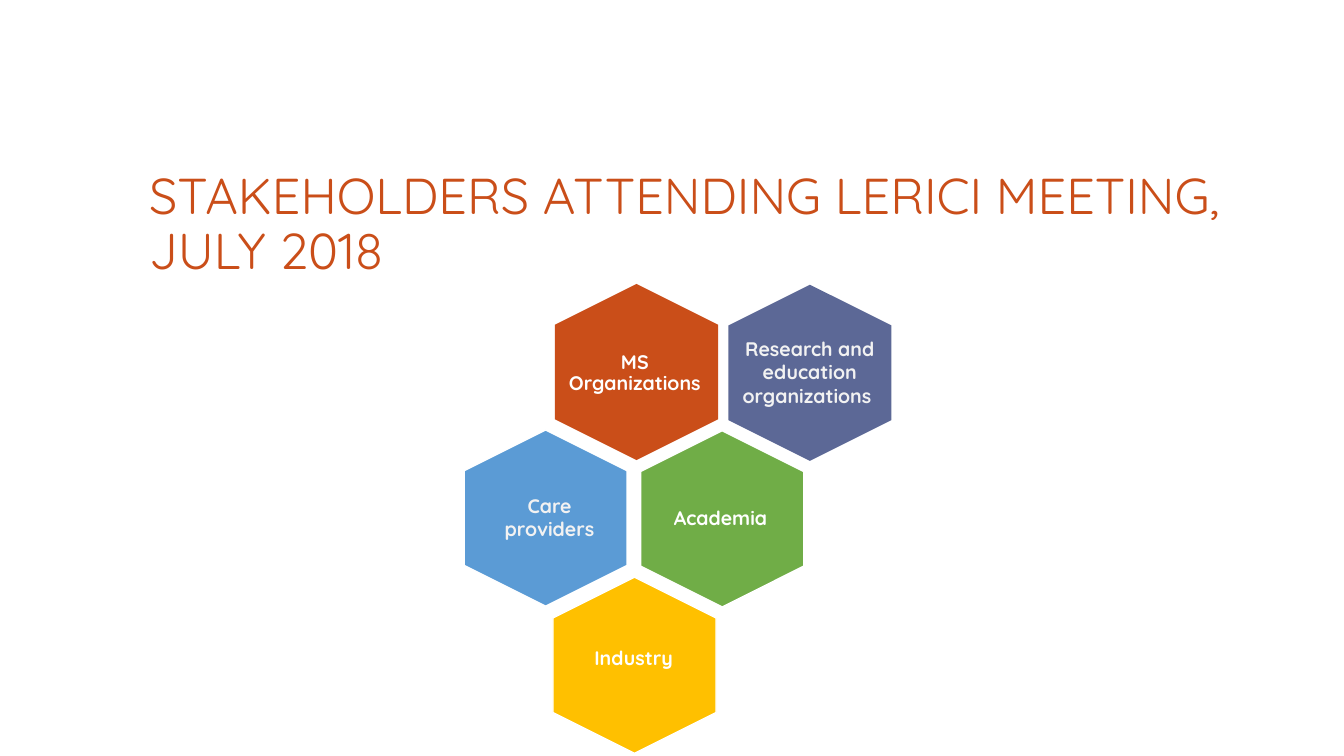
from lxml import etree
from pptx import Presentation
from pptx.dml.color import RGBColor
from pptx.enum.shapes import MSO_SHAPE
from pptx.enum.text import MSO_ANCHOR, MSO_AUTO_SIZE, PP_ALIGN
from pptx.oxml.ns import qn
from pptx.util import Cm, Pt

HEXAGON = MSO_SHAPE.HEXAGON
TOP, MIDDLE = MSO_ANCHOR.TOP, MSO_ANCHOR.MIDDLE
LEFT, CENTER = PP_ALIGN.LEFT, PP_ALIGN.CENTER
GROW = MSO_AUTO_SIZE.SHAPE_TO_FIT_TEXT
FONT = "Quicksand"
HEX_W, HEX_H = 4.44, 4.11
COLORS = {
    "rust": "CA4E19",
    "gold": "FFC000",
    "green": "70AD47",
    "blue": "5B9BD5",
    "navy": "263673",
    "white": "FFFFFF",
    "pale": "F2F2F2",
}


def rgb(name):
    """Return the named colour."""
    return RGBColor.from_string(COLORS[name])


def add_text(shapes, box, lines, size, color, bold=False, align=CENTER,
             anchor=TOP, space=None, inset=None, grow=False, wrap=True):
    """Add a text box with one paragraph per line."""
    frame = shapes.add_textbox(*map(Cm, box)).text_frame
    frame.word_wrap = wrap
    frame.vertical_anchor = anchor
    if grow:
        frame.auto_size = GROW
    if inset is not None:
        frame.margin_left = frame.margin_right = Cm(inset)
        frame.margin_top = frame.margin_bottom = Cm(inset)
    for i, line in enumerate(lines):
        para = frame.add_paragraph() if i else frame.paragraphs[0]
        para.alignment = align
        if space:
            para.line_spacing = space
        run = para.add_run()
        run.text = line
        run.font.name = FONT
        run.font.size = Pt(size)
        run.font.bold = bold
        run.font.color.rgb = rgb(color)


def add_hex(shapes, left, top, color, edge=True, alpha=None):
    """Add an upright hexagon, with a white edge if asked."""
    cell = shapes.add_shape(HEXAGON, Cm(left), Cm(top), Cm(HEX_W), Cm(HEX_H))
    cell.rotation = 90
    cell.shadow.inherit = False
    cell.fill.solid()
    cell.fill.fore_color.rgb = rgb(color)
    if edge:
        cell.line.color.rgb = rgb("white")
        cell.line.width = Pt(1)
    else:
        cell.line.fill.background()
    if alpha:
        tint = next(cell.fill._xPr.iter(qn("a:srgbClr")))
        etree.SubElement(tint, qn("a:alpha")).set("val", str(alpha * 1000))


def main():
    """Build the slide of stakeholders."""
    deck = Presentation()
    deck.slide_width, deck.slide_height = Cm(33.87), Cm(19.05)
    slide = deck.slides.add_slide(deck.slide_layouts[6])
    title = "STAKEHOLDERS ATTENDING LERICI MEETING, JULY 2018"
    add_text(slide.shapes, (3.51, 4.19, 27.99, 3.73), [title], 36, "rust",
             align=LEFT, space=0.9)

    fixed = dict(color="white", anchor=MIDDLE, space=0.9, inset=0.18)
    loose = dict(color="pale", grow=True)
    cells = [
        ((13.82, 7.32, "rust", False), (13.97, 7.9, 4.06, 3.05),
         ["MS Organizations"], fixed),
        ((13.77, 14.71, "gold"), (14.55, 15.09, 2.84, 3.05),
         ["Industry"], fixed),
        ((15.98, 11.02, "green"), (16.13, 11.56, 4.06, 3.05),
         ["Academia"], fixed),
        ((11.53, 11, "blue"), (12.47, 12.32, 2.9, 1.45),
         ["Care ", "providers "], dict(loose, wrap=False)),
        ((18.19, 7.34, "navy", False, 75), (18.34, 8.36, 4.14, 2.06),
         ["Research and education organizations "], loose),
    ]
    for cell, box, lines, style in cells:
        group = slide.shapes.add_group_shape()
        add_hex(group.shapes, *cell)
        add_text(group.shapes, box, lines, 14, bold=True, **style)
    deck.save("out.pptx")


if __name__ == "__main__":
    main()
